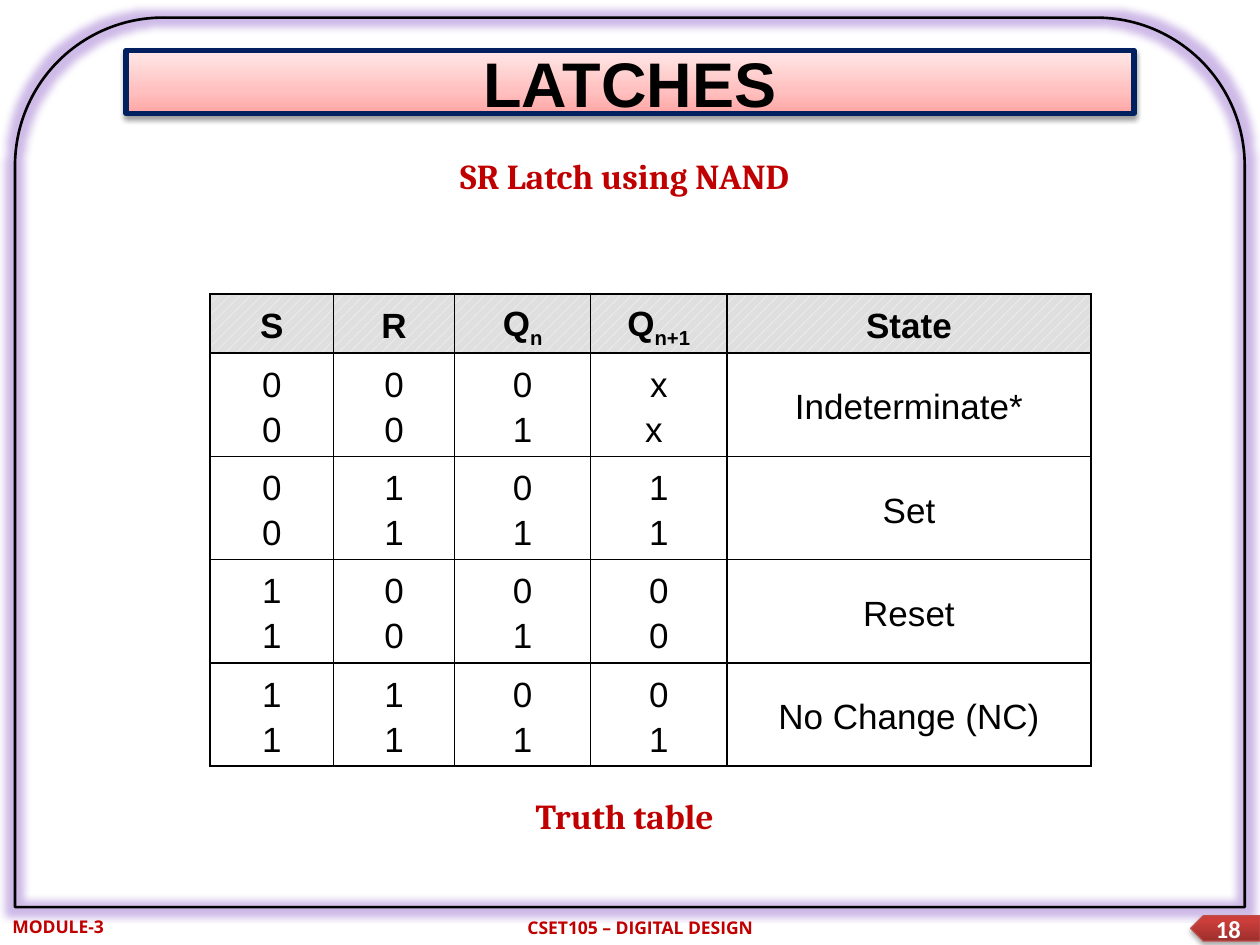
from lxml import etree
from pptx import Presentation
from pptx.dml.color import RGBColor
from pptx.enum.dml import MSO_PATTERN
from pptx.enum.shapes import MSO_SHAPE
from pptx.enum.text import MSO_ANCHOR, MSO_AUTO_SIZE, PP_ALIGN
from pptx.oxml.ns import qn
from pptx.util import Pt

CENTER, LEFT = PP_ALIGN.CENTER, PP_ALIGN.LEFT
MIDDLE, TOP = MSO_ANCHOR.MIDDLE, MSO_ANCHOR.TOP
NO_FIT = MSO_AUTO_SIZE.NONE
FRAME = MSO_SHAPE.ROUND_2_SAME_RECTANGLE
PENTAGON = MSO_SHAPE.PENTAGON
DOTTED = MSO_PATTERN.PERCENT_20
TITLE_ONLY = 5

BLACK = RGBColor(0x00, 0x00, 0x00)
WHITE = RGBColor(0xFF, 0xFF, 0xFF)
NAVY = RGBColor(0x00, 0x20, 0x60)
RED = RGBColor(0xC0, 0x00, 0x00)
TAG_EDGE = RGBColor(0xBF, 0x4C, 0x48)
GREY = RGBColor(0xDF, 0xDF, 0xDF)
PURPLE = RGBColor(0x84, 0x50, 0xC4)
PINKS = [(0, RGBColor(0xFF, 0xA6, 0xA5)), (35, RGBColor(0xFF, 0xC0, 0xBF)),
         (100, RGBColor(0xFF, 0xE7, 0xE7))]
REDS = [(0, RGBColor(0x9C, 0x2F, 0x2D)), (80, RGBColor(0xCB, 0x3E, 0x3A)),
        (100, RGBColor(0xCE, 0x3B, 0x37))]

TITLE = {"size": Pt(36), "name": "Arial", "bold": True}
HEADING = {"size": Pt(20), "name": "Cambria", "bold": True}
FOOTER = {"size": Pt(10), "name": "Open Sans", "bold": True}
NUMBER = {"size": Pt(14), "name": "Calibri", "bold": True}
HEAD_CELL = {"size": Pt(20), "name": "Arial", "bold": True}
BODY_CELL = {"size": Pt(20), "name": "Arial", "bold": False}

COLUMN_WIDTHS = [70.7, 69.1, 77.8, 77.8, 208.2]
ROW_HEIGHTS = [33.8] + [59] * 4
# An underscore separates a symbol from its subscript
HEADERS = ["S", "R", "Q_n", "Q_n+1", "State"]
# Each column text holds the two lines of one cell
STATES = [
    ("0\n0", "0\n0", "0\n1", "x\nx ", "Indeterminate*"),
    ("0\n0", "1\n1", "0\n1", "1\n1", "Set"),
    ("1\n1", "0\n0", "0\n1", "0\n0", "Reset"),
    ("1\n1", "1\n1", "0\n1", "0\n1", "No Change (NC)"),
]


def child(parent, tag, **attributes):
    values = {key: str(value) for key, value in attributes.items()}
    return etree.SubElement(parent, qn(tag), values)


class SlideBuilder:
    def __init__(self, slide):
        self.slide = slide

    def place(self, shape, left, top, width, height):
        shape.left, shape.top = Pt(left), Pt(top)
        shape.width, shape.height = Pt(width), Pt(height)

    def fill_text(self, frame, text, style, color, align=CENTER, spacing=None):
        for index, line in enumerate(text.split("\n")):
            para = frame.paragraphs[0] if index == 0 else frame.add_paragraph()
            para.alignment, para.line_spacing = align, spacing
            for level, part in enumerate(line.split("_")):
                span = para.add_run()
                span.text = part
                for key, value in style.items():
                    setattr(span.font, key, value)
                span.font.color.rgb = color
                if level:
                    span.font._element.set("baseline", "-25000")

    def gradient(self, shape, stops):
        shape.fill.gradient()
        shape.fill.gradient_angle = 90
        stop_list = shape._element.spPr.find(qn("a:gradFill")).find(qn("a:gsLst"))
        for stop in list(stop_list):
            stop_list.remove(stop)
        for position, color in stops:
            stop = child(stop_list, "a:gs", pos=position * 1000)
            child(stop, "a:srgbClr", val=color)

    def outline(self, shape, color, width):
        shape.line.color.rgb = color
        shape.line.width = Pt(width)

    def effect(self, shape, tag, color, alpha, **attributes):
        effects = child(shape._element.spPr, "a:effectLst")
        tint = child(child(effects, tag, **attributes), "a:srgbClr", val=color)
        child(tint, "a:alpha", val=alpha * 1000)

    def shadow(self, shape, alpha, distance):
        self.effect(shape, "a:outerShdw", BLACK, alpha, blurRad=Pt(3.1),
                    dist=Pt(distance), dir=5400000, rotWithShape=0)

    def frame(self, *area):
        shape = self.slide.shapes.add_shape(FRAME, *map(Pt, area))
        shape.fill.background()
        self.outline(shape, BLACK, 1.5)
        self.effect(shape, "a:glow", PURPLE, 40, rad=Pt(8))

    def title(self, text, *area):
        shape = self.slide.shapes.title
        self.place(shape, *area)
        geometry = child(shape._element.spPr, "a:prstGeom", prst="roundRect")
        child(geometry, "a:avLst")
        self.gradient(shape, PINKS)
        self.outline(shape, NAVY, 3)
        self.shadow(shape, 38, 1.6)
        frame = shape.text_frame
        frame.auto_size, frame.vertical_anchor = NO_FIT, MIDDLE
        self.fill_text(frame, text, TITLE, BLACK)

    def page_tag(self, text, *area):
        shape = self.slide.shapes.add_shape(PENTAGON, *map(Pt, area))
        shape._element.spPr.xfrm.set("flipH", "1")
        self.gradient(shape, REDS)
        self.outline(shape, TAG_EDGE, 0.75)
        self.shadow(shape, 35, 1.8)
        shape.text_frame.vertical_anchor = MIDDLE
        self.fill_text(shape.text_frame, text, NUMBER, WHITE)

    def label(self, text, style, *area, align=CENTER, anchor=TOP):
        box = self.slide.shapes.add_textbox(*map(Pt, area))
        box.text_frame.word_wrap = True
        box.text_frame.vertical_anchor = anchor
        self.fill_text(box.text_frame, text, style, RED, align)

    def borders(self, cell):
        properties = cell._tc.get_or_add_tcPr()
        for side in ("a:lnL", "a:lnR", "a:lnT", "a:lnB"):
            edge = child(properties, side, w=Pt(1))
            child(child(edge, "a:solidFill"), "a:srgbClr", val=BLACK)

    def cell(self, cell, text, is_header):
        cell.margin_left = cell.margin_right = Pt(5)
        cell.margin_top = cell.margin_bottom = 0
        cell.vertical_anchor = MIDDLE
        self.borders(cell)
        if is_header:
            cell.fill.patterned()
            cell.fill.pattern = DOTTED
            cell.fill.fore_color.rgb = WHITE
            cell.fill.back_color.rgb = GREY
        else:
            cell.fill.background()
        style = HEAD_CELL if is_header else BODY_CELL
        self.fill_text(cell.text_frame, text, style, BLACK, spacing=1.15)

    def table(self, rows, left, top):
        size = sum(COLUMN_WIDTHS), sum(ROW_HEIGHTS)
        table = self.slide.shapes.add_table(
            len(rows), len(COLUMN_WIDTHS), Pt(left), Pt(top), *map(Pt, size)).table
        for column, width in zip(table.columns, COLUMN_WIDTHS):
            column.width = Pt(width)
        for row, height in zip(table.rows, ROW_HEIGHTS):
            row.height = Pt(height)
        for index, texts in enumerate(rows):
            for column, text in enumerate(texts):
                self.cell(table.cell(index, column), text, index == 0)


def main():
    deck = Presentation()
    deck.slide_width, deck.slide_height = Pt(720), Pt(540)
    page = SlideBuilder(deck.slides.add_slide(deck.slide_layouts[TITLE_ONLY]))

    # Frame and title banner
    page.frame(8.6, 10.1, 702.7, 508.3)
    page.title("LATCHES", 72, 28.8, 576, 36)

    # Footer
    page.label("CSET105 – DIGITAL DESIGN", FOOTER, 203.8, 520.6, 324, 19.4)
    page.page_tag("18", 680.4, 523.4, 39.6, 14.4)
    page.label("MODULE-3", FOOTER, 0, 519.8, 131.8, 19.4, align=LEFT)

    # Truth table between its heading and caption
    page.label("SR Latch using NAND", HEADING, 162, 84.2, 390, 31.7, anchor=MIDDLE)
    page.table([HEADERS] + STATES, 120, 168)
    page.label("Truth table", HEADING, 162, 450, 390, 31.7, anchor=MIDDLE)

    deck.save("out.pptx")


if __name__ == "__main__":
    main()
